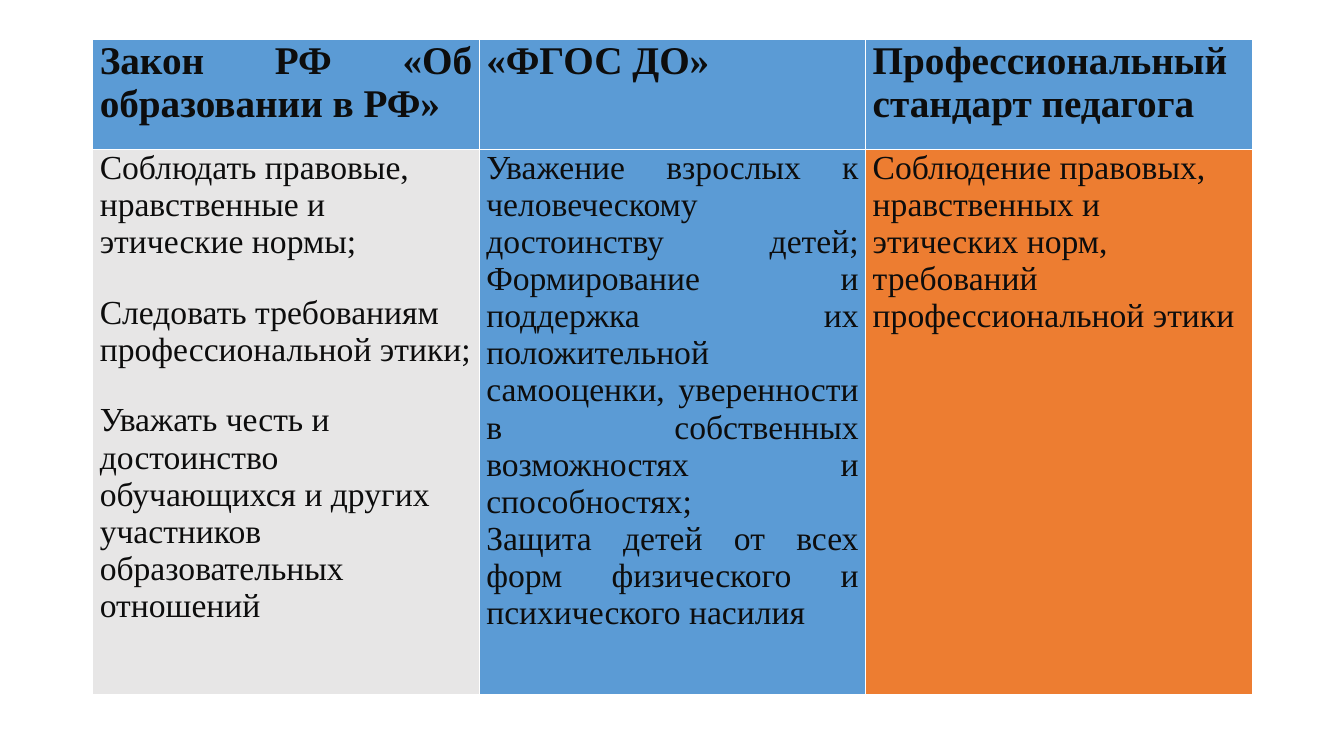
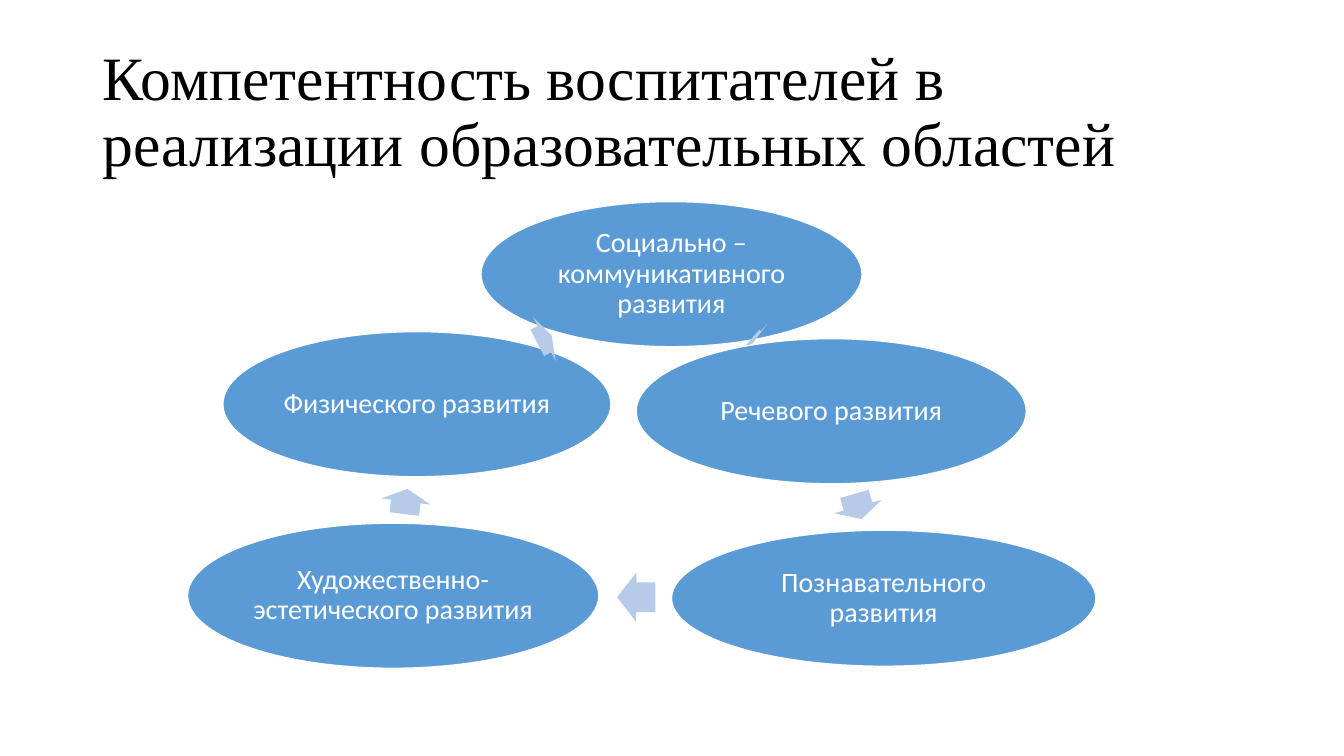
"""Build two slides on the ethics and competence of preschool teachers."""

from dataclasses import dataclass

from pptx import Presentation
from pptx.dml.color import RGBColor
from pptx.enum.shapes import MSO_SHAPE as Shape
from pptx.enum.text import MSO_ANCHOR as Anchor
from pptx.enum.text import MSO_AUTO_SIZE as Fit
from pptx.enum.text import PP_ALIGN as Align
from pptx.slide import Slide
from pptx.table import _Cell as Cell
from pptx.text.text import TextFrame
from pptx.util import Inches, Pt

BLUE = RGBColor(0x5B, 0x9B, 0xD5)
PALE = RGBColor(0xB5, 0xCB, 0xE7)
GRAY = RGBColor(0xE7, 0xE6, 0xE6)
ORANGE = RGBColor(0xED, 0x7D, 0x31)
INK = RGBColor(0x0D, 0x0D, 0x0D)
BLACK = RGBColor(0, 0, 0)
WHITE = RGBColor(0xFF, 0xFF, 0xFF)
SERIF = "Times New Roman"
SANS = "Calibri"
LEFT, WIDE = 0.92, 11.5


@dataclass(frozen=True)
class Column:
    head: str
    body: str
    fill: RGBColor
    align: Align = Align.LEFT
    gap: int = 0


@dataclass(frozen=True)
class Oval:
    text: str
    left: float
    top: float
    width: float
    height: float = 1.44


@dataclass(frozen=True)
class Arrow:
    left: float
    top: float
    width: float
    turn: float
    height: float = 0.49


COLUMNS = (
    Column(
        "Закон РФ «Об образовании в РФ»",
        "Соблюдать правовые, нравственные и этические нормы;\n"
        "Следовать требованиям профессиональной этики;\n"
        "Уважать честь и достоинство обучающихся и других участников "
        "образовательных отношений",
        GRAY,
        gap=12,
    ),
    Column(
        "«ФГОС ДО»",
        "Уважение взрослых к человеческому достоинству детей; Формирование "
        "и поддержка их положительной самооценки, уверенности в собственных "
        "возможностях и способностях;\n"
        "Защита детей от всех форм физического и психического насилия",
        BLUE,
        Align.JUSTIFY,
    ),
    Column(
        "Профессиональный стандарт педагога",
        "Соблюдение правовых, нравственных и этических норм, требований "
        "профессиональной этики",
        ORANGE,
    ),
)

CYCLE = (
    (Oval("Социально –коммуникативного развития", 4.77, 2, 3.78),
     Arrow(7.43, 3.15, 0.04, 40.9)),
    (Oval("Речевого развития", 6.31, 3.36, 3.87),
     Arrow(8.38, 4.78, 0.26, 74.1)),
    (Oval("Познавательного развития", 6.66, 5.26, 4.21, 1.35),
     Arrow(6.12, 5.68, 0.38, 180.3)),
    (Oval("Художественно-эстетического развития", 1.86, 5.19, 4.08),
     Arrow(3.9, 4.73, 0.25, 277.1)),
    (Oval("Физического развития", 2.21, 3.29, 3.85),
     Arrow(5.32, 3.12, 0.16, 332.8)),
)


def style(frame: TextFrame, face: str, size: int, color: RGBColor,
          align: Align, bold: bool = False, gap: int = 0,
          pitch: float = 1.0) -> None:
    """Format every paragraph and run of a text frame."""
    for para in frame.paragraphs:
        para.alignment = align
        para.line_spacing = pitch
        para.space_before = para.space_after = Pt(gap)
        for run in para.runs:
            run.font.name = face
            run.font.size = Pt(size)
            run.font.bold = bold
            run.font.color.rgb = color


def fill_cell(cell: Cell, text: str, fill: RGBColor, size: int,
              align: Align, bold: bool = False, gap: int = 0) -> None:
    """Write and color one table cell."""
    cell.fill.solid()
    cell.fill.fore_color.rgb = fill
    cell.margin_left = cell.margin_right = Inches(0.07)
    cell.margin_top = cell.margin_bottom = 0
    cell.text_frame.text = text
    style(cell.text_frame, SERIF, size, INK, align, bold, gap)


def add_grid(slide: Slide) -> None:
    """Draw the table that compares the three documents."""
    table = slide.shapes.add_table(
        2, len(COLUMNS), Inches(LEFT), Inches(0.39), Inches(WIDE), Inches(6.5)
    ).table
    table.horz_banding = False
    for row, height in zip(table.rows, (1.09, 5.41)):
        row.height = Inches(height)
    for num, col in enumerate(COLUMNS):
        fill_cell(table.cell(0, num), col.head, BLUE, 28, Align.JUSTIFY, True)
        fill_cell(table.cell(1, num), col.body, col.fill, 24, col.align,
                  gap=col.gap)


def add_title(slide: Slide, text: str) -> None:
    """Place and format the slide title."""
    title = slide.shapes.title
    title.left, title.top = Inches(LEFT), Inches(0.4)
    title.width, title.height = Inches(WIDE), Inches(1.45)
    frame = title.text_frame
    frame.text = text
    frame.auto_size = Fit.NONE
    frame.vertical_anchor = Anchor.MIDDLE
    style(frame, SERIF, 44, BLACK, Align.LEFT, pitch=0.9)


def add_oval(slide: Slide, oval: Oval) -> None:
    """Draw one labeled area of development."""
    shape = slide.shapes.add_shape(
        Shape.OVAL, Inches(oval.left), Inches(oval.top),
        Inches(oval.width), Inches(oval.height)
    )
    shape.shadow.inherit = False
    shape.fill.solid()
    shape.fill.fore_color.rgb = BLUE
    shape.line.color.rgb = WHITE
    shape.line.width = Pt(1)
    frame = shape.text_frame
    frame.text = oval.text
    frame.word_wrap = True
    frame.vertical_anchor = Anchor.MIDDLE
    frame.margin_left = frame.margin_right = Inches(0.03)
    frame.margin_top = frame.margin_bottom = Inches(0.03)
    style(frame, SANS, 20, WHITE, Align.CENTER, pitch=0.9)


def add_arrow(slide: Slide, arrow: Arrow) -> None:
    """Draw one turned arrow of the cycle."""
    shape = slide.shapes.add_shape(
        Shape.RIGHT_ARROW, Inches(arrow.left), Inches(arrow.top),
        Inches(arrow.width), Inches(arrow.height)
    )
    shape.shadow.inherit = False
    shape.adjustments[0] = 0.6
    shape.adjustments[1] = 0.5
    shape.rotation = arrow.turn
    shape.fill.solid()
    shape.fill.fore_color.rgb = PALE
    shape.line.fill.background()


def main() -> None:
    """Build and save the presentation."""
    deck = Presentation()
    deck.slide_width, deck.slide_height = Inches(13.33), Inches(7.5)
    add_grid(deck.slides.add_slide(deck.slide_layouts[6]))
    slide = deck.slides.add_slide(deck.slide_layouts[5])
    add_title(
        slide,
        "Компетентность воспитателей в реализации образовательных областей",
    )
    for oval, arrow in CYCLE:
        add_oval(slide, oval)
        add_arrow(slide, arrow)
    deck.save("out.pptx")


if __name__ == "__main__":
    main()
